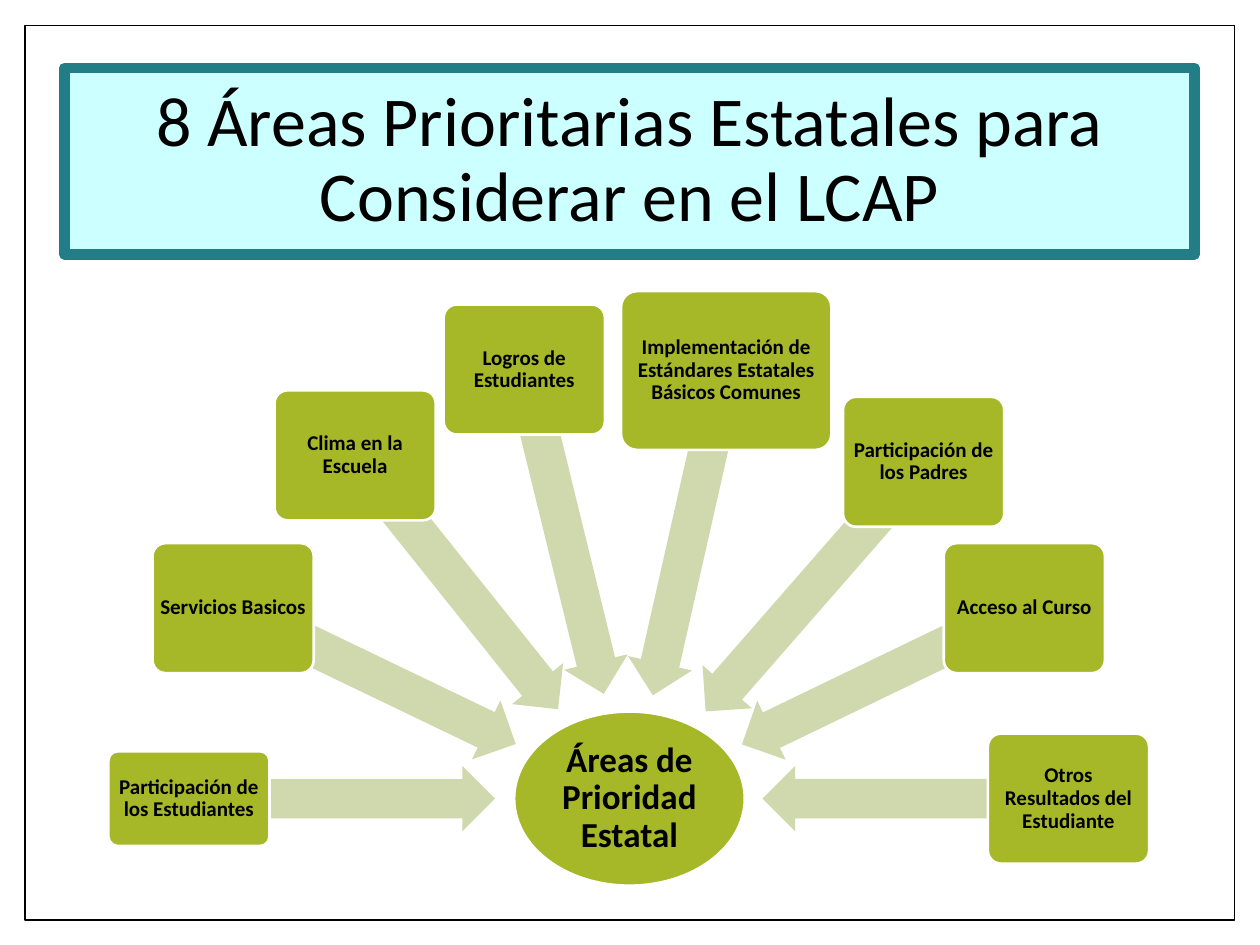
from math import atan2, cos, degrees, radians, sin

from pptx import Presentation
from pptx.dml.color import RGBColor
from pptx.enum.shapes import MSO_SHAPE
from pptx.enum.text import MSO_ANCHOR, PP_ALIGN
from pptx.util import Cm, Pt

RECT = MSO_SHAPE.RECTANGLE
ROUNDED = MSO_SHAPE.ROUNDED_RECTANGLE
ELLIPSE = MSO_SHAPE.OVAL
LEFT_ARROW = MSO_SHAPE.LEFT_ARROW
MIDDLE = MSO_ANCHOR.MIDDLE
CENTER = PP_ALIGN.CENTER

COLORS = {
    "white": "FFFFFF",
    "black": "000000",
    "banner": "CCFFFF",
    "teal": "227D87",
    "olive": "A6B727",
    "pale_olive": "D0D8AD",
}

# Lengths in cm; every position is a centre point
HUB = (12.69, 16.1)
BOX_SIZE = (3.25, 2.62)
ARROW_THICKNESS = 1.32

# Text, box centre, box size, arrow length
PRIORITIES = [
    ("Participación de los Estudiantes", (3.81, 16.1), (3.25, 1.91), 6.17),
    ("Servicios Basicos", (4.7, 12.26), BOX_SIZE, 6.32),
    ("Clima en la Escuela", (7.16, 9.18), BOX_SIZE, 6.55),
    ("Logros de Estudiantes", (10.57, 7.45), BOX_SIZE, 6.73),
    ("Implementación de Estándares Estatales Básicos Comunes",
     (14.64, 7.47), (4.24, 3.2), 6.71),
    ("Participación de los Padres", (18.62, 9.31), BOX_SIZE, 6.68),
    ("Acceso al Curso", (20.65, 12.26), BOX_SIZE, 6.32),
    ("Otros Resultados del Estudiante", (21.54, 16.1), BOX_SIZE, 6.17),
]


def color(name):
    return RGBColor.from_string(COLORS[name])


def add_block(slide, kind, center, size, fill, line=None, line_width=1.5):
    """Add a preset shape around its centre point."""
    (x, y), (width, height) = center, size
    block = slide.shapes.add_shape(
        kind, Cm(x - width / 2), Cm(y - height / 2), Cm(width), Cm(height))
    block.shadow.inherit = False
    block.fill.solid()
    block.fill.fore_color.rgb = color(fill)
    if line:
        block.line.color.rgb = color(line)
        block.line.width = Pt(line_width)
    else:
        block.line.fill.background()
    return block


def write(block, text, size=12, bold=True, inset=0.08):
    """Write centred text inside a block."""
    frame = block.text_frame
    frame.word_wrap = True
    frame.vertical_anchor = MIDDLE
    frame.margin_left = frame.margin_right = Cm(inset)
    frame.margin_top = frame.margin_bottom = Cm(inset)
    paragraph = frame.paragraphs[0]
    paragraph.alignment = CENTER
    paragraph.line_spacing = 0.9
    run = paragraph.add_run()
    run.text = text
    run.font.name = "Calibri"
    run.font.size = Pt(size)
    run.font.bold = bold
    run.font.color.rgb = color("black")


def add_arrow_to_hub(slide, start, length):
    """Add a block arrow that runs from a box centre towards the hub."""
    angle = degrees(atan2(HUB[1] - start[1], HUB[0] - start[0]))
    middle = (start[0] + length / 2 * cos(radians(angle)),
              start[1] + length / 2 * sin(radians(angle)))
    arrow = add_block(slide, LEFT_ARROW, middle, (length, ARROW_THICKNESS), "pale_olive")
    arrow.adjustments[0] = 0.6
    arrow.adjustments[1] = 0.5
    arrow.rotation = (angle + 180) % 360


def add_priority(slide, text, center, size, arrow_length):
    add_arrow_to_hub(slide, center, arrow_length)
    box = add_block(slide, ROUNDED, center, size, "olive", "white")
    box.adjustments[0] = 0.1
    write(box, text)


def main():
    presentation = Presentation()
    presentation.slide_width = Cm(25.4)
    presentation.slide_height = Cm(19.05)
    slide = presentation.slides.add_slide(presentation.slide_layouts[6])

    # Page frame and title banner
    add_block(slide, RECT, (12.7, 9.53), (24.38, 18.03), "white", "black", 1)
    title = add_block(slide, RECT, (12.69, 3.25), (22.78, 3.76), "banner", "teal", 6)
    write(title, "8 Áreas Prioritarias Estatales para Considerar en el LCAP",
          size=40, bold=False, inset=0.25)

    # Hub with the eight priorities around it
    hub = add_block(slide, ELLIPSE, HUB, (4.65, 3.51), "olive", "white")
    write(hub, "Áreas de Prioridad Estatal", size=20, inset=0.03)
    for priority in PRIORITIES:
        add_priority(slide, *priority)

    presentation.save("out.pptx")


if __name__ == "__main__":
    main()
